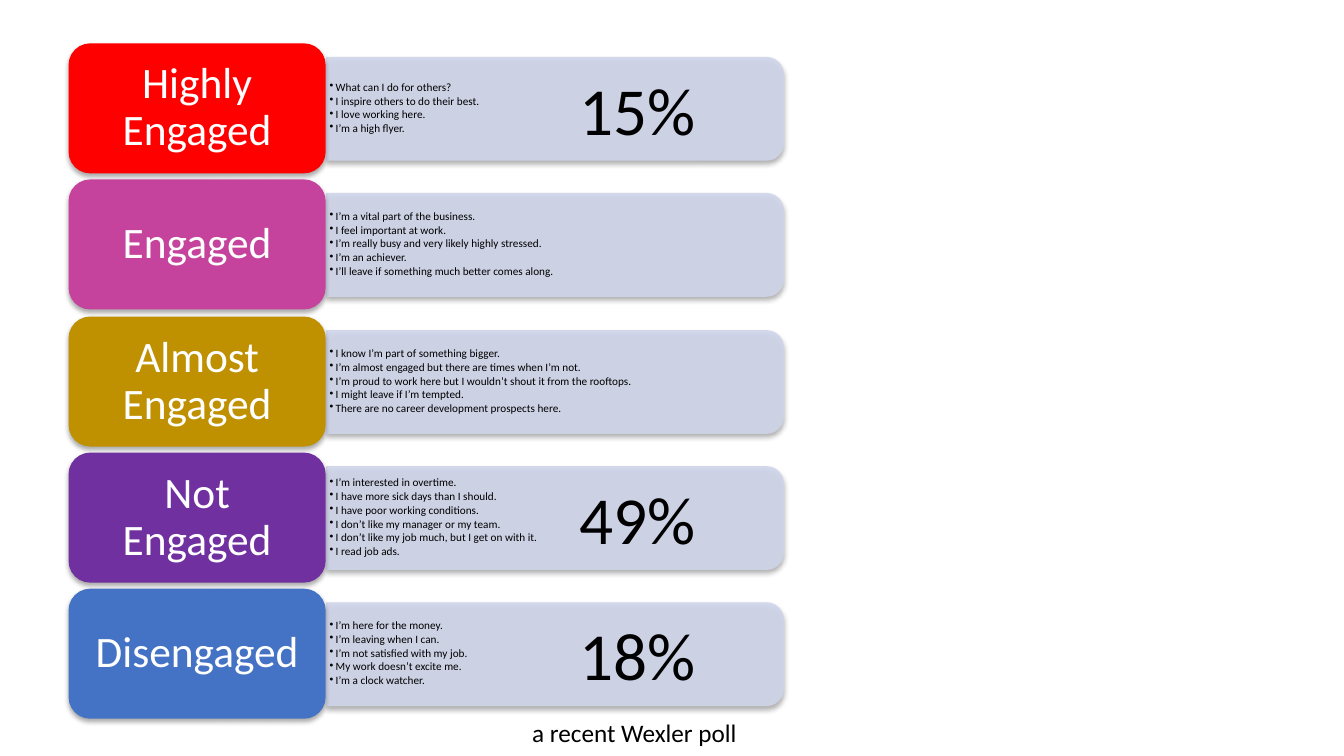
import pptx
import pptx.util
import pptx.dml.color
import pptx.enum.shapes
import pptx.enum.text
import pptx.oxml
import pptx.oxml.ns

PX = 9144  # 100 px to the inch
NS = pptx.oxml.ns.nsdecls("a")
KIND = pptx.enum.shapes.MSO_SHAPE
MID = pptx.enum.text.MSO_ANCHOR.MIDDLE

deck = pptx.Presentation()
deck.slide_width, deck.slide_height = 1333 * PX, 750 * PX
slide = deck.slides.add_slide(deck.slide_layouts[6])


def block(kind, box, color):
    """Add a borderless filled shape with a soft shadow below it."""
    shape = slide.shapes.add_shape(kind, *[v * PX for v in box])
    shape.fill.solid()
    shape.fill.fore_color.rgb = pptx.dml.color.RGBColor.from_string(color)
    shape.line.fill.background()
    shape.shadow.inherit = False
    glow = shape._element.spPr.find(pptx.oxml.ns.qn("a:effectLst"))
    glow.append(pptx.oxml.parse_xml(
        f'<a:outerShdw {NS} blurRad="44450" dist="27940" dir="5400000" '
        'algn="ctr" rotWithShape="0"><a:srgbClr val="000000">'
        '<a:alpha val="32000"/></a:srgbClr></a:outerShdw>'))
    return shape


def style(frame, size, color):
    for par in frame.paragraphs:
        for run in par.runs:
            run.font.name = "Calibri"
            run.font.size = pptx.util.Pt(size)
            run.font.color.rgb = pptx.dml.color.RGBColor.from_string(color)


levels = [
    ("Highly Engaged", "FF0000", "15%", [
        "What can I do for others?",
        "I inspire others to do their best.",
        "I love working here.",
        "I’m a high flyer."]),
    ("Engaged", "C5439D", None, [
        "I’m a vital part of the business.",
        "I feel important at work.",
        "I’m really busy and very likely highly stressed.",
        "I’m an achiever.",
        "I’ll leave if something much better comes along."]),
    ("Almost Engaged", "BF9000", None, [
        "I know I’m part of something bigger.",
        "I’m almost engaged but there are times when I’m not.",
        "I’m proud to work here but I wouldn’t shout it from the rooftops.",
        "I might leave if I’m tempted.",
        "There are no career development prospects here."]),
    ("Not Engaged", "7030A0", "49%", [
        "I’m interested in overtime.",
        "I have more sick days than I should.",
        "I have poor working conditions.",
        "I don’t like my manager or my team.",
        "I don’t like my job much, but I get on with it.",
        "I read job ads."]),
    ("Disengaged", "4472C4", "18%", [
        "I’m here for the money.",
        "I’m leaving when I can.",
        "I’m not satisfied with my job.",
        "My work doesn’t excite me.",
        "I’m a clock watcher."]),
]

notes = [("a recent Wexler poll", 18, (518, 707, 250, 40))]

for i, (name, color, share, quotes) in enumerate(levels):
    top = round(43.2 + 135.2 * i)

    bar = block(KIND.ROUND_2_SAME_RECTANGLE, (499, top - 162, 103, 454), "CFD5EA")
    bar.rotation = 90
    tint = bar._element.spPr.find(".//" + pptx.oxml.ns.qn("a:srgbClr"))
    tint.append(pptx.oxml.parse_xml(f'<a:alpha {NS} val="90000"/>'))

    box = slide.shapes.add_textbox(324 * PX, (top + 18) * PX, 449 * PX, 93 * PX)
    frame = box.text_frame
    frame.word_wrap = True
    frame.vertical_anchor = MID
    frame.margin_left = frame.margin_right = 3 * PX
    frame.margin_top = frame.margin_bottom = 2 * PX
    frame.text = "\n".join(quotes)
    for par in frame.paragraphs:
        par.line_spacing = 0.9
        par.space_after = pptx.util.Pt(1.2)
        props = par._p.get_or_add_pPr()
        props.set("marL", str(6 * PX))
        props.set("indent", str(-6 * PX))
        props.append(pptx.oxml.parse_xml(f'<a:buChar {NS} char="•"/>'))
    style(frame, 8, "000000")

    tile = block(KIND.ROUNDED_RECTANGLE, (68, top, 255, 129), color)
    frame = tile.text_frame
    frame.word_wrap = True
    frame.vertical_anchor = MID
    frame.margin_left = frame.margin_right = 13 * PX
    frame.margin_top = frame.margin_bottom = 6 * PX
    frame.text = name
    frame.paragraphs[0].alignment = pptx.enum.text.PP_ALIGN.CENTER
    frame.paragraphs[0].line_spacing = 0.9
    style(frame, 31, "FFFFFF")

    if share:
        notes.append((share, 48, (565, top + 20, 150, 91)))

for text, size, place in notes:
    box = slide.shapes.add_textbox(*[v * PX for v in place])
    frame = box.text_frame
    frame.word_wrap = True
    frame.auto_size = pptx.enum.text.MSO_AUTO_SIZE.SHAPE_TO_FIT_TEXT
    frame.text = text
    style(frame, size, "000000")

deck.save("out.pptx")
